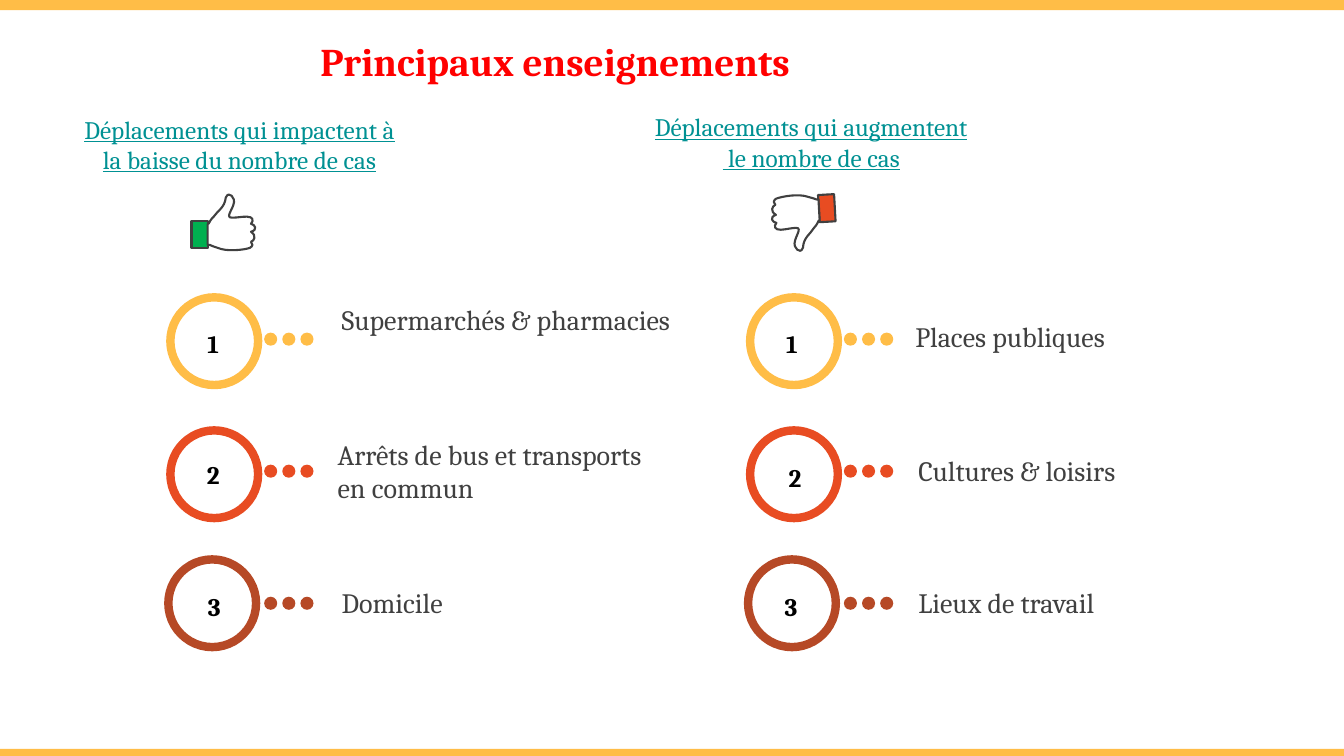
from lxml.etree import Element
from pptx import Presentation
from pptx.dml.color import RGBColor
from pptx.enum.shapes import MSO_SHAPE as Shape
from pptx.enum.text import MSO_ANCHOR as Anchor, MSO_AUTO_SIZE as AutoSize, PP_ALIGN as Align
from pptx.oxml.ns import qn
from pptx.util import Inches, Pt

AMBER, ORANGE, RUST = "FFBD47", "E84C22", "B64926"
GREEN, TEAL, GREY = "00B050", "009193", "404040"
LEFT, CENTER = Align.LEFT, Align.CENTER


def paint(shape, fill=None, line=None, weight=1.5):
    shape.shadow.inherit = False
    if fill:
        shape.fill.solid()
        shape.fill.fore_color.rgb = RGBColor.from_string(fill)
    else:
        shape.fill.background()
    if line:
        shape.line.color.rgb = RGBColor.from_string(line)
        shape.line.width = Pt(weight)
    else:
        shape.line.fill.background()


def write(box, text, size, color, align=LEFT, bold=False, underline=False):
    frame = box.text_frame
    frame.text = text
    frame.word_wrap = True
    frame.auto_size = AutoSize.SHAPE_TO_FIT_TEXT
    frame.vertical_anchor = Anchor.TOP
    for paragraph in frame.paragraphs:
        paragraph.alignment = align
        for run in paragraph.runs:
            run.font.name = "Cambria"
            run.font.size = Pt(size)
            run.font.bold = bold
            run.font.underline = underline
            run.font.color.rgb = RGBColor.from_string(color)


prs = Presentation()
prs.slide_width, prs.slide_height = Inches(13.33), Inches(7.5)
slide = prs.slides.add_slide(prs.slide_layouts[5])
shapes = slide.shapes

# Bands at the top and bottom edges
for top, height in ((0, 0.1), (7.43, 0.07)):
    band = shapes.add_shape(Shape.RECTANGLE, 0, Inches(top), prs.slide_width, Inches(height))
    paint(band, AMBER)

# Title
title = shapes.title
title.left, title.top, title.width, title.height = map(Inches, (0.49, 0.32, 10.03, 0.57))
write(title, "Principaux enseignements", 28, "FF0000", CENTER, bold=True)

# Column headings
headings = (
    (0.65, 1.08, "Déplacements qui impactent à la baisse du nombre de cas"),
    (6.32, 1.06, "Déplacements qui augmentent\n le nombre de cas"),
)
for left, top, heading in headings:
    box = shapes.add_textbox(Inches(left), Inches(top), Inches(3.45), Inches(0.71))
    write(box, heading, 18, TEAL, CENTER, underline=True)

# Outline of a hand in hundredths of an inch: a line has one point, a curve three
HAND_WIDTH, HAND_HEIGHT = 47, 56
HAND_START = (21, 0)
HAND_SEGMENTS = (
    (23, 0, 25, 2, 26, 5), (28, 12, 16, 23, 24, 23), (30, 23, 33, 22, 39, 22),
    (45, 22, 46, 26, 43, 29), (47, 30, 50, 35, 43, 37), (49, 41, 46, 46, 43, 47),
    (45, 49, 45, 51, 42, 53), (36, 55, 19, 57, 10, 53), (7, 52, 4, 51, 2, 50),
    (0, 50), (0, 29), (0, 29, 1, 29, 1, 29),
    (2, 27, 3, 25, 6, 22), (10, 16, 17, 13, 18, 3), (19, 1, 20, 0, 21, 0),
)

# Thumb up and thumb down: cuff position, hand position, turn
thumbs = ((1.9, 2.19, 2.06, 0, GREEN), (8.12, 1.93, 7.66, 176.8, ORANGE))
for cuff_left, cuff_top, hand_left, turn, color in thumbs:
    cuff = shapes.add_shape(Shape.RECTANGLE, Inches(cuff_left), Inches(cuff_top),
                            Inches(0.16), Inches(0.27))
    paint(cuff, color, GREY)

    builder = shapes.build_freeform(*HAND_START, scale=Inches(0.01))
    builder.add_line_segments([segment[-2:] for segment in HAND_SEGMENTS], close=True)
    hand = builder.convert_to_shape()
    outline = next(hand.element.iter(qn("a:path")))
    outline.set("w", str(HAND_WIDTH))
    outline.set("h", str(HAND_HEIGHT))

    # Bend the segments that have control points
    for side, segment in zip(outline.findall(qn("a:lnTo")), HAND_SEGMENTS):
        if len(segment) == 6:
            curve = Element(qn("a:cubicBezTo"))
            for x, y in zip(segment[::2], segment[1::2]):
                curve.append(Element(qn("a:pt"), x=str(x), y=str(y)))
            outline.replace(side, curve)

    hand.left, hand.top = Inches(hand_left), Inches(1.93)
    hand.width, hand.height = Inches(HAND_WIDTH / 100), Inches(HAND_HEIGHT / 100)
    paint(hand, "FFFFFF", GREY)
    cuff.rotation = hand.rotation = turn

# Ranked places: ring left and top, first dot, colour
COLUMN, ROW, DOT_GAP = 5.75, 1.31, 0.18
rings = ((1.69, 2.95, 2.62, AMBER), (1.69, 4.27, 2.62, ORANGE), (1.67, 5.55, 2.62, RUST))
# Number left and top, then label left, top, height and wording
places = (
    ((1.87, 3.21, 3.29, 2.95, 0.77, "Supermarchés & pharmacies"),
     (1.87, 4.51, 3.25, 4.29, 0.77, "Arrêts de bus et transports en commun"),
     (1.88, 5.82, 3.29, 5.76, 0.44, "Domicile")),
    ((7.61, 3.21, 8.98, 3.12, 0.44, "Places publiques"),
     (7.64, 4.54, 9.01, 4.45, 0.44, "Cultures & loisirs"),
     (7.6, 5.82, 9.01, 5.76, 0.44, "Lieux de travail")),
)
for column, ranking in enumerate(places):
    for row, (ring_spot, place) in enumerate(zip(rings, ranking)):
        ring_left, ring_top, dot_left, color = ring_spot
        number_left, number_top, label_left, label_top, label_height, wording = place
        shift = column * COLUMN

        ring = shapes.add_shape(Shape.OVAL, Inches(ring_left + shift), Inches(ring_top),
                                Inches(0.87), Inches(0.87))
        paint(ring, line=color, weight=6)

        for index in range(3):
            dot = shapes.add_shape(Shape.OVAL, Inches(dot_left + shift + index * DOT_GAP),
                                   Inches(3.3 + row * ROW), Inches(0.13), Inches(0.13))
            paint(dot, color)

        number = shapes.add_textbox(Inches(number_left), Inches(number_top),
                                    Inches(0.49), Inches(0.4))
        write(number, str(row + 1), 18, "000000", CENTER, bold=True)

        label = shapes.add_textbox(Inches(label_left), Inches(label_top),
                                   Inches(3.5), Inches(label_height))
        write(label, wording, 20, GREY)

prs.save("out.pptx")
